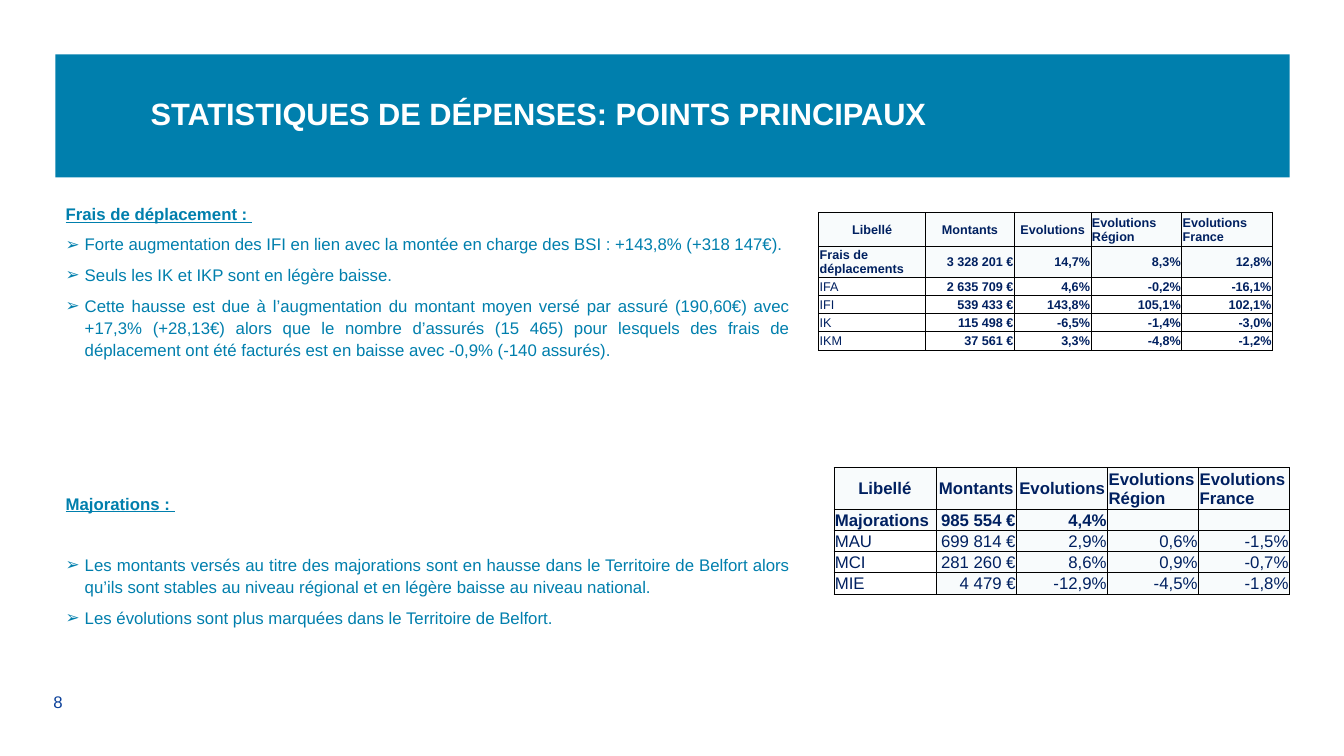
from lxml import etree
from pptx import Presentation
from pptx.dml.color import RGBColor
from pptx.enum.text import MSO_ANCHOR, MSO_AUTO_SIZE, PP_ALIGN
from pptx.oxml.ns import qn
from pptx.util import Inches, Pt

LEFT, CENTER, RIGHT, JUSTIFY = PP_ALIGN.LEFT, PP_ALIGN.CENTER, PP_ALIGN.RIGHT, PP_ALIGN.JUSTIFY
TOP, MIDDLE = MSO_ANCHOR.TOP, MSO_ANCHOR.MIDDLE
NO_FIT = MSO_AUTO_SIZE.NONE

COLORS = {"teal": "007FAD", "white": "FFFFFF", "navy": "002060",
          "blue": "0C419A", "pale": "F8FBFC", "black": "000000"}
FONT = "Arial"
WIDTH, HEIGHT = Inches(13.33), Inches(7.5)

# Body lines: text, kind, space before in points
BODY = [
    ("Frais de déplacement : ", "heading", 0),
    ("Forte augmentation des IFI en lien avec la montée en charge des BSI : "
     "+143,8% (+318 147€).", "bullet", 6),
    ("Seuls les IK et IKP sont en légère baisse.", "bullet", 6),
    ("Cette hausse est due à l’augmentation du montant moyen versé par assuré (190,60€) "
     "avec +17,3% (+28,13€) alors que le nombre d’assurés (15 465) pour lesquels des frais "
     "de déplacement ont été facturés est en baisse avec -0,9% (-140 assurés).", "bullet", 6),
    ("Majorations : ", "heading", 94),
    ("Les montants versés au titre des majorations sont en hausse dans le Territoire de "
     "Belfort alors qu’ils sont stables au niveau régional et en légère baisse au niveau "
     "national.", "bullet", 28),
    ("Les évolutions sont plus marquées dans le Territoire de Belfort.", "bullet", 6),
]
HEADER = ["Libellé", "Montants", "Evolutions", "Evolutions Région", "Evolutions France"]
TRAVEL = [
    HEADER,
    ["Frais de déplacements", "3 328 201 €", "14,7%", "8,3%", "12,8%"],
    ["IFA", "2 635 709 €", "4,6%", "-0,2%", "-16,1%"],
    ["IFI", "539 433 €", "143,8%", "105,1%", "102,1%"],
    ["IK", "115 498 €", "-6,5%", "-1,4%", "-3,0%"],
    ["IKM", "37 561 €", "3,3%", "-4,8%", "-1,2%"],
]
SURCHARGES = [
    HEADER,
    ["Majorations", "985 554 €", "4,4%", "", ""],
    ["MAU", "699 814 €", "2,9%", "0,6%", "-1,5%"],
    ["MCI", "281 260 €", "8,6%", "0,9%", "-0,7%"],
    ["MIE", "4 479 €", "-12,9%", "-4,5%", "-1,8%"],
]


def color(name):
    return RGBColor.from_string(COLORS[name])


def box(x, y, w, h):
    """Turn percentages of the slide into left, top, width, height."""
    return [int(side * share / 100) for side, share in
            zip((WIDTH, HEIGHT, WIDTH, HEIGHT), (x, y, w, h))]


def place(sp, area):
    sp.left, sp.top, sp.width, sp.height = area


def write(p, text, size=12, ink="teal", bold=False, underline=False,
          align=LEFT, before=0, spacing=1.0):
    p.alignment, p.line_spacing, p.space_before = align, spacing, Pt(before)
    if not text:
        etree.SubElement(p._p, qn("a:endParaRPr"), sz=str(size * 100))
        return
    r = p.add_run()
    r.text = text
    f = r.font
    f.name, f.size, f.bold, f.underline = FONT, Pt(size), bold, underline
    f.color.rgb = color(ink)


def set_bullet(p, kind):
    pPr = p._p.get_or_add_pPr()
    if kind == "heading":
        pPr.set("marL", "0")
        pPr.set("indent", "0")
        etree.SubElement(pPr, qn("a:buNone"))
        return
    pPr.set("marL", str(Inches(0.19)))
    pPr.set("indent", str(-Inches(0.19)))
    clr = etree.SubElement(pPr, qn("a:buClr"))
    etree.SubElement(clr, qn("a:srgbClr"), val=COLORS["teal"])
    etree.SubElement(pPr, qn("a:buFont"), typeface=FONT)
    etree.SubElement(pPr, qn("a:buChar"), char="➢")


def add_title(s, area):
    sp = s.shapes.title
    place(sp, area)
    sp.fill.solid()
    sp.fill.fore_color.rgb = color("teal")
    tf = sp.text_frame
    tf.auto_size, tf.vertical_anchor = NO_FIT, MIDDLE
    tf.margin_left = int(area[2] * 0.077)
    write(tf.paragraphs[0], "STATISTIQUES DE DÉPENSES: POINTS PRINCIPAUX",
          size=22, ink="white", bold=True, spacing=0.9)


def add_body(s, area):
    sp = s.placeholders[1]
    place(sp, area)
    tf = sp.text_frame
    tf.auto_size, tf.vertical_anchor = NO_FIT, TOP
    for i, (text, kind, before) in enumerate(BODY):
        p = tf.add_paragraph() if i else tf.paragraphs[0]
        set_bullet(p, kind)
        heading = kind == "heading"
        write(p, text, bold=heading, underline=heading,
              align=JUSTIFY, before=before, spacing=1.1)


def add_page_number(s, area):
    tf = s.shapes.add_textbox(*area).text_frame
    tf.word_wrap, tf.vertical_anchor = True, MIDDLE
    write(tf.paragraphs[0], "8", ink="blue")


def format_cell(cell, fill):
    cell.vertical_anchor = MIDDLE
    cell.margin_left = cell.margin_right = cell.margin_top = Inches(0.01)
    cell.margin_bottom = 0
    tcPr = cell._tc.get_or_add_tcPr()
    for side in ("lnL", "lnR", "lnT", "lnB"):
        ln = etree.SubElement(tcPr, qn("a:" + side), w=str(Pt(0.5)))
        solid = etree.SubElement(ln, qn("a:solidFill"))
        etree.SubElement(solid, qn("a:srgbClr"), val=COLORS["black"])
    if fill:
        cell.fill.solid()
        cell.fill.fore_color.rgb = color(fill)
    else:
        cell.fill.background()


def add_figures(s, area, rows, col_shares, row_shares, size, bold_values, label_fill, value_fill):
    table = s.shapes.add_table(len(rows), len(HEADER), *area).table
    table.first_row = table.horz_banding = False
    for col, share in zip(table.columns, col_shares):
        col.width = int(area[2] * share / sum(col_shares))
    for row, share in zip(table.rows, row_shares):
        row.height = int(area[3] * share / sum(row_shares))
    for i, values in enumerate(rows):
        for j, text in enumerate(values):
            summary, label = i < 2, j == 0
            cell = table.cell(i, j)
            format_cell(cell, "pale" if summary else label_fill if label else value_fill)
            if i == 0:
                align = CENTER if j < 3 else LEFT
            else:
                align = LEFT if label else RIGHT
            write(cell.text_frame.paragraphs[0], text, size=size, ink="navy",
                  bold=summary or (bold_values and not label), align=align)


def main():
    prs = Presentation()
    prs.slide_width, prs.slide_height = WIDTH, HEIGHT
    s = prs.slides.add_slide(prs.slide_layouts[1])
    add_body(s, box(4.13, 26, 55.44, 59.33))
    add_page_number(s, box(3.23, 90.8, 5.93, 4.13))
    add_title(s, box(4.13, 7.2, 91.82, 16.27))
    # Travel costs, then surcharges
    add_figures(s, box(60.92, 28.13, 33.76, 18), TRAVEL, [106, 88, 76, 90, 90],
                [33, 30, 18, 18, 18, 18], 9, True, "white", "white")
    add_figures(s, box(62.04, 61.87, 33.91, 15.8), SURCHARGES, [101, 80, 90, 90, 90],
                [39, 20, 20, 20, 20], 12, False, None, "pale")
    prs.save("out.pptx")


if __name__ == "__main__":
    main()
